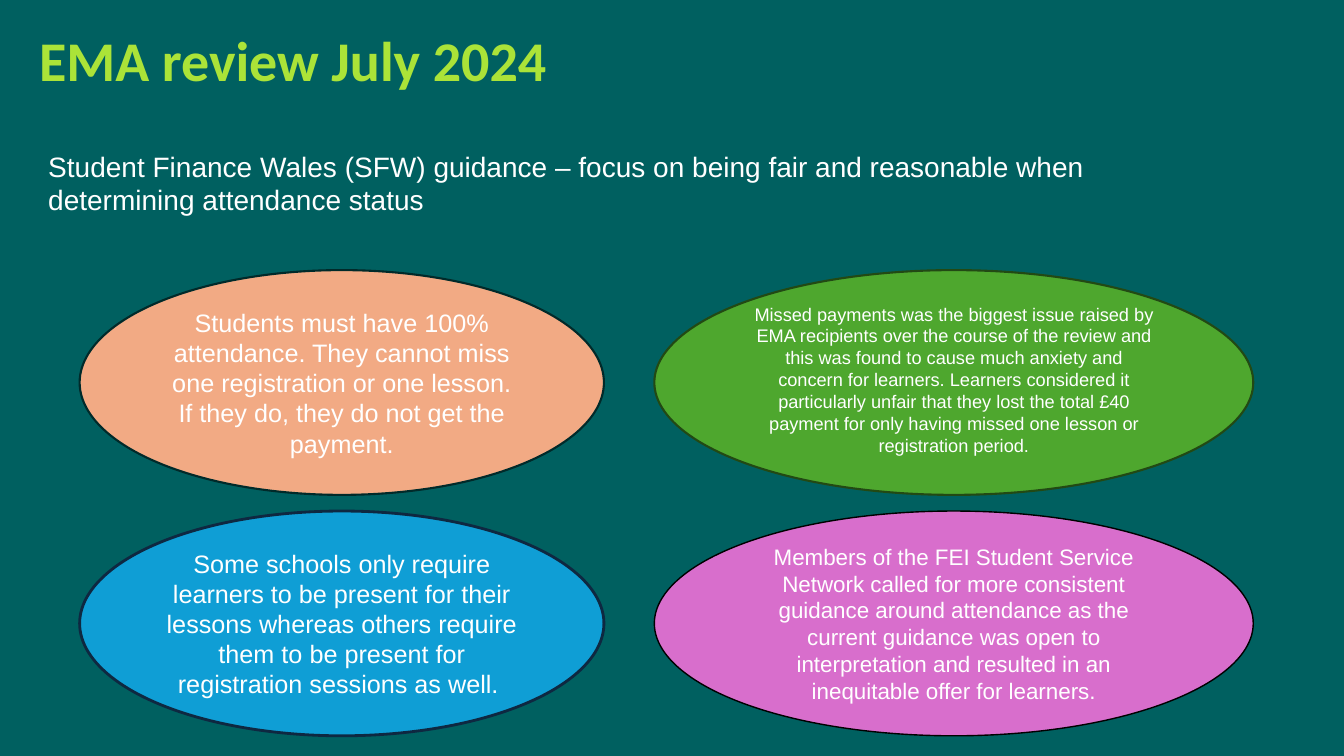
from pptx import Presentation
from pptx import util as u
from pptx.dml.color import RGBColor
from pptx.enum import shapes, text

WHITE = "FFFFFF"
COLS = [(0.79, 5.2), (6.49, 5.94)]  # left, width
ROWS = [2.68, 5.07]
HIGH = 2.23

# column, row, fill, line, line width, text size, words
OVALS = [
    (0, 0, "F2AA84", "002A2A", 1.5, 18,
     "Students must have 100% attendance. They cannot miss one registration "
     "or one lesson. If they do, they do not get the payment."),
    (1, 0, "4EA72E", "224914", 1.5, 13,
     "Missed payments was the biggest issue raised by EMA recipients over the "
     "course of the review and this was found to cause much anxiety and concern "
     "for learners. Learners considered it particularly unfair that they lost "
     "the total £40 payment for only having missed one lesson or registration "
     "period."),
    (0, 1, "0F9ED5", "0E2841", 2, 18,
     "Some schools only require learners to be present for their lessons whereas "
     "others require them to be present for registration sessions as well. "),
    (1, 1, "D86ECC", "000000", 1, 16,
     "Members of the FEI Student Service Network called for more consistent "
     "guidance around attendance as the current guidance was open to "
     "interpretation and resulted in an inequitable offer for learners."),
]


def paint(color, code):
    color.rgb = RGBColor.from_string(code)


def fill(part, code):
    part.fill.solid()
    paint(part.fill.fore_color, code)


def write(frame, words, size, code=WHITE, face="Arial", bold=False):
    frame.word_wrap = True
    run = frame.paragraphs[0].add_run()
    run.text = words
    font = run.font
    font.size, font.name, font.bold = u.Pt(size), face, bold
    paint(font.color, code)


def add_text(slide, left, top, width, height, words, size, **style):
    box = slide.shapes.add_textbox(*map(u.Inches, (left, top, width, height)))
    box.text_frame.auto_size = text.MSO_AUTO_SIZE.SHAPE_TO_FIT_TEXT
    write(box.text_frame, words, size, **style)


def add_oval(slide, col, row, tint, edge, weight, size, words):
    left, width = COLS[col]
    oval = slide.shapes.add_shape(
        shapes.MSO_SHAPE.OVAL,
        *map(u.Inches, (left, ROWS[row], width, HIGH)))
    oval.shadow.inherit = False
    fill(oval, tint)
    paint(oval.line.color, edge)
    oval.line.width = u.Pt(weight)
    frame = oval.text_frame
    frame.vertical_anchor = text.MSO_ANCHOR.MIDDLE
    write(frame, words, size)
    frame.paragraphs[0].alignment = text.PP_ALIGN.CENTER
    return oval


def main():
    deck = Presentation()
    deck.slide_width, deck.slide_height = u.Inches(13.33), u.Inches(7.5)
    slide = deck.slides.add_slide(deck.slide_layouts[6])
    fill(slide.background, "006060")

    add_text(slide, 0.29, 0.2, 7.33, 0.77, "EMA review July 2024", 40,
             code="ABE338", face="Calibri", bold=True)
    ovals = [add_oval(slide, *oval) for oval in OVALS]
    # The longest text sits a little above the middle
    missed = ovals[1].text_frame
    missed.margin_top, missed.margin_bottom = 0, u.Inches(0.06)
    add_text(slide, 0.38, 1.43, 11.71, 0.77,
             "Student Finance Wales (SFW) guidance – focus on being fair and "
             "reasonable when determining attendance status", 20)
    deck.save("out.pptx")


if __name__ == "__main__":
    main()
